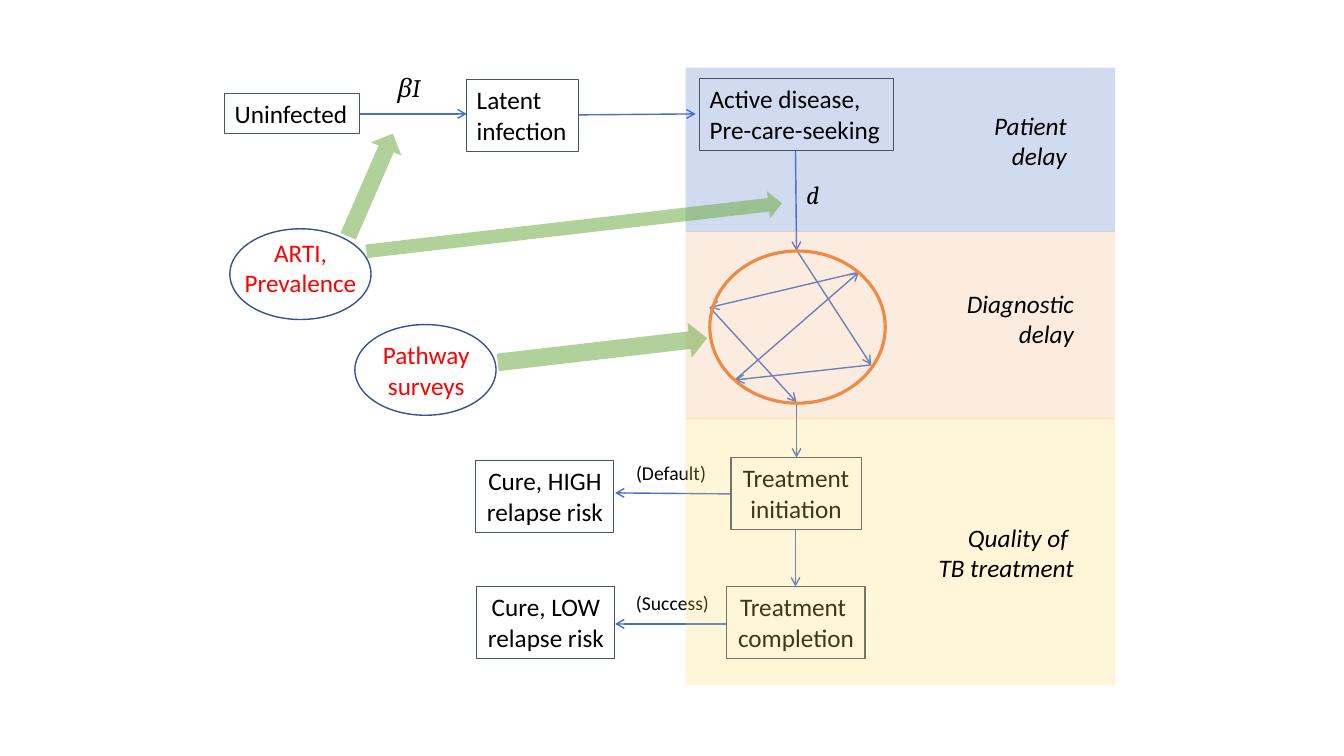
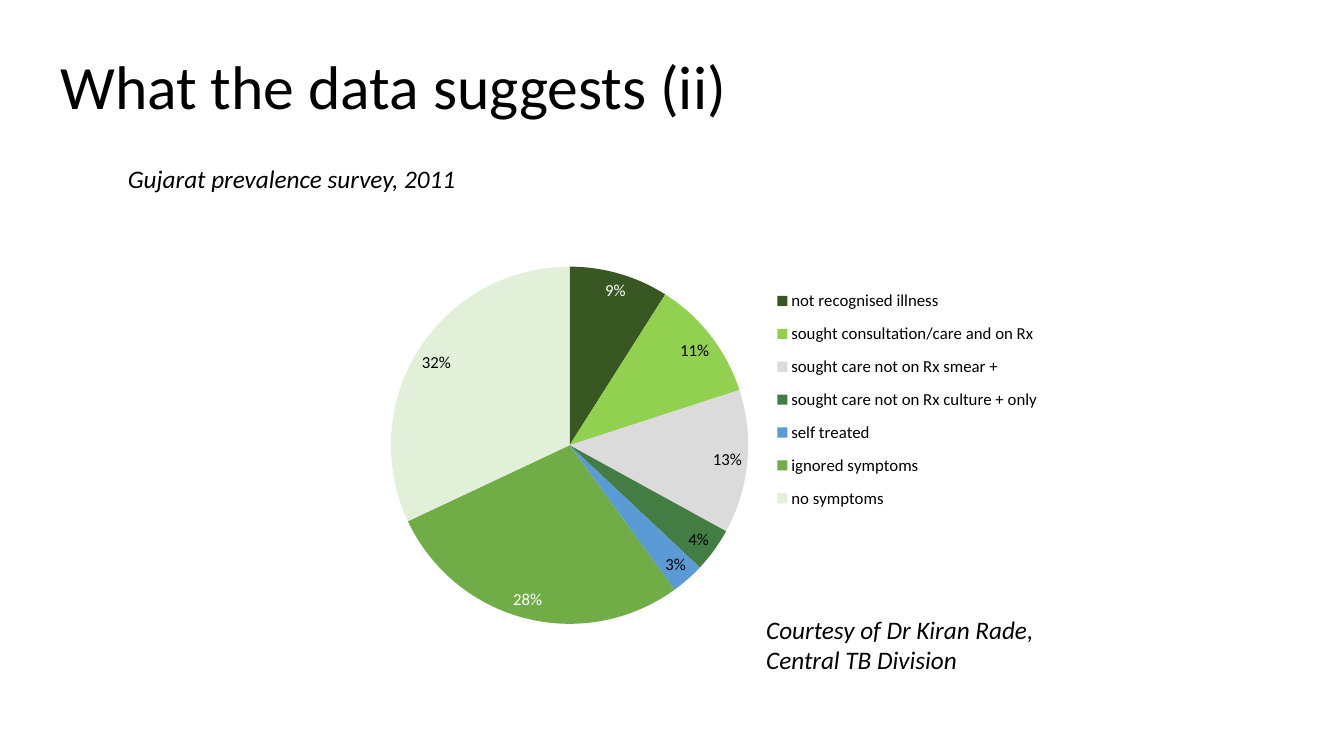
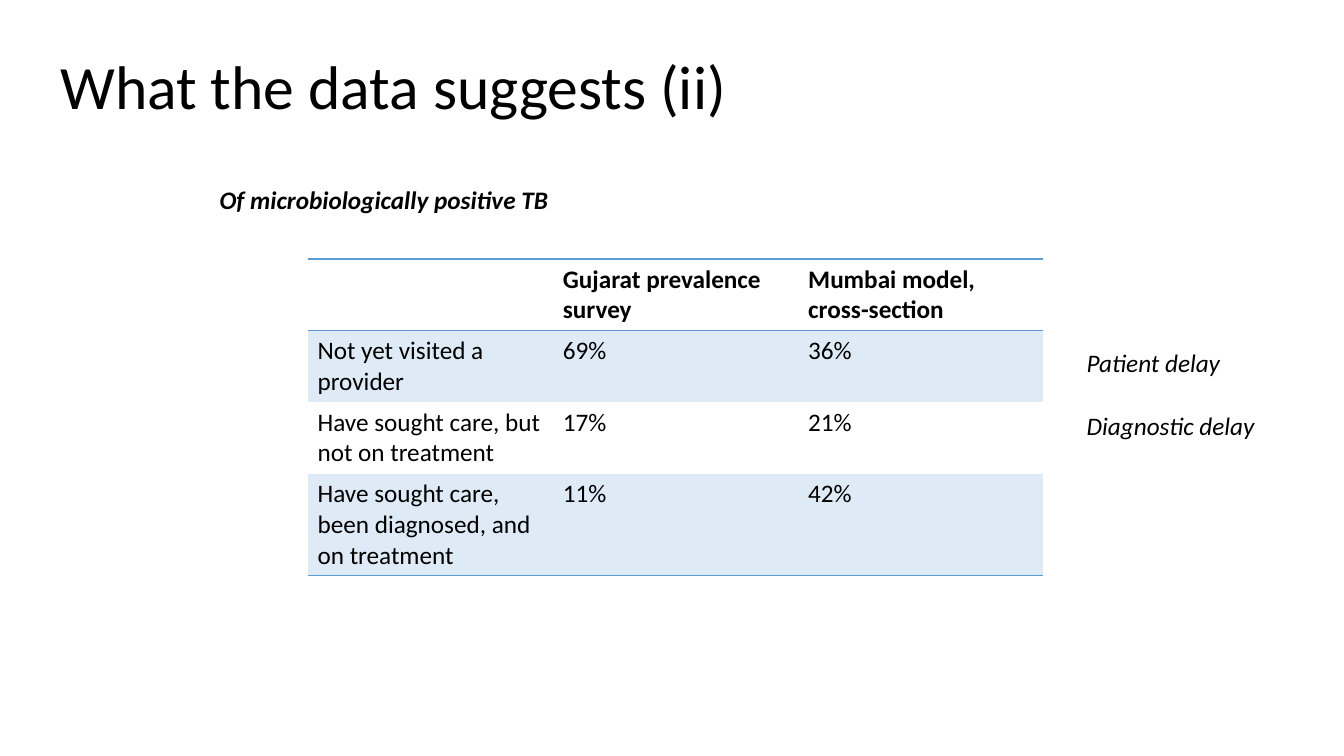
from lxml import etree
from pptx import Presentation
from pptx.chart.data import CategoryChartData
from pptx.dml.color import RGBColor
from pptx.enum.chart import XL_CHART_TYPE, XL_LABEL_POSITION, XL_LEGEND_POSITION
from pptx.enum.shapes import MSO_CONNECTOR, MSO_SHAPE
from pptx.enum.text import MSO_ANCHOR, MSO_AUTO_SIZE, PP_ALIGN
from pptx.oxml.ns import qn
from pptx.util import Pt

PX = 9144  # 100 px to the inch
RECT, OVAL, ARROW = MSO_SHAPE.RECTANGLE, MSO_SHAPE.OVAL, MSO_SHAPE.RIGHT_ARROW
STRAIGHT = MSO_CONNECTOR.STRAIGHT
LEFT, MID, RIGHT = PP_ALIGN.LEFT, PP_ALIGN.CENTER, PP_ALIGN.RIGHT
MIDDLE, GROW = MSO_ANCHOR.MIDDLE, MSO_AUTO_SIZE.SHAPE_TO_FIT_TEXT
PIE, FIT = XL_CHART_TYPE.PIE, XL_LABEL_POSITION.BEST_FIT
SIDE = XL_LEGEND_POSITION.RIGHT

FONT = "Calibri"
BLACK, WHITE, RED = "000000", "FFFFFF", "FF0000"
BLUE, SLATE, NAVY, ORANGE, GREEN = "4472C4", "44546A", "325491", "ED7D31", "70AD47"
RULE, STRIPE = "5B9BD5", "DEEBF7"
NO_GRID = "{2D5ABB26-0587-4C30-8999-92F81FD0307C}"


def paint(fill, color):
    fill.solid()
    fill.fore_color.rgb = RGBColor.from_string(color)


def write(frame, text, align=LEFT, color=BLACK, **style):
    """Fill a text frame, one paragraph a line, in one format."""
    frame.text = text
    style = {"name": FONT, "size": Pt(18), **style}
    for para in frame.paragraphs:
        para.alignment = align
        for run in para.runs:
            paint(run.font.fill, color)
            for key, value in style.items():
                setattr(run.font, key, value)


deck = Presentation()
deck.slide_width, deck.slide_height = 1333 * PX, 750 * PX
flow, survey, model = [deck.slides.add_slide(deck.slide_layouts[6]) for _ in range(3)]

# Titles
for slide in (survey, model):
    title = slide.shapes.add_textbox(50 * PX, 40 * PX, 1192 * PX, 98 * PX)
    frame = title.text_frame
    frame.word_wrap, frame.vertical_anchor = True, MIDDLE
    write(frame, "What the data suggests (ii)", size=Pt(44))
    frame.paragraphs[0].line_spacing = 0.9

# Layers, from back to front: tinted shapes, arrows, rings, labels
center = {"align": MID}
slant = {"italic": True}
delay = {"italic": True, "align": RIGHT}
math = {"italic": True, "name": "Cambria"}
small = {"size": Pt(14)}
source = {"color": RED, "align": MID}

stops = [(790, 248), (864, 362), (729, 377), (852, 270), (704, 305), (790, 399), (790, 454)]
steps = [
    ((357, 113), (463, 113)),
    ((574, 114), (690, 113)),
    ((789, 149), (790, 249)),
    *zip(stops, stops[1:]),
    ((789, 526), (789, 582)),
    ((725, 490), (610, 489)),
    ((721, 619), (610, 619)),
]

layers = [
    (
        flow,
        [(RECT, (680, 67, 426, 163), 0, BLUE, 25)],
        steps,
        [((704, 249, 174, 151), ORANGE, 2.25)],
        [
            ((223, 93, 134, 40), SLATE, "Uninfected", {}),
            ((463, 79, 111, 71), SLATE, "Latent\ninfection", {}),
            ((694, 78, 192, 71), SLATE, "Active disease,\nPre-care-seeking", {}),
            ((725, 454, 129, 71), SLATE, "Treatment \ninitiation", center),
            ((721, 582, 137, 71), SLATE, "Treatment \ncompletion", center),
            ((472, 457, 137, 71), SLATE, "Cure, HIGH\nrelapse risk", center),
            ((473, 582, 137, 71), SLATE, "Cure, LOW\nrelapse risk", center),
            ((384, 67, 49, 40), None, "βI", math),
            ((790, 173, 33, 40), None, "d", math),
            ((621, 452, 91, 34), None, "(Default)", small),
            ((621, 581, 93, 34), None, "(Success)", small),
        ],
    ),
    (
        flow,
        [
            (RECT, (680, 229, 426, 187), 0, "F4B183", 25),
            (RECT, (680, 414, 426, 266), 0, "FFD966", 25),
            (ARROW, (362, 212, 415, 27), 353.4, GREEN, 55),
            (ARROW, (312, 167, 111, 33), 293.5, GREEN, 55),
            (ARROW, (493, 330, 209, 35), 353.4, GREEN, 55),
        ],
        [],
        [((228, 227, 140, 90), NAVY, 1), ((352, 322, 140, 90), NAVY, 1)],
        [
            ((975, 104, 93, 71), None, "Patient\ndelay", delay),
            ((947, 281, 128, 71), None, "Diagnostic\ndelay", delay),
            ((919, 513, 156, 71), None, "Quality of \nTB treatment", delay),
            ((232, 230, 132, 71), None, "ARTI,\nPrevalence", source),
            ((370, 332, 113, 71), None, "Pathway\nsurveys", source),
        ],
    ),
    (
        survey, [], [], [],
        [
            ((117, 157, 350, 40), None, "Gujarat prevalence survey, 2011", slant),
            ((750, 604, 295, 71), None, "Courtesy of Dr Kiran Rade,\nCentral TB Division", slant),
        ],
    ),
    (
        model, [], [], [],
        [
            ((208, 178, 349, 40), None, "Of microbiologically positive TB", {**slant, "bold": True}),
            ((1068, 340, 153, 40), None, "Patient delay", slant),
            ((1068, 402, 189, 40), None, "Diagnostic delay", slant),
        ],
    ),
]

for slide, tints, arrows, rings, labels in layers:
    shapes = slide.shapes
    for kind, box, turn, color, alpha in tints:
        tint = shapes.add_shape(kind, *[n * PX for n in box])
        tint.shadow.inherit = False
        tint.rotation = turn
        tint.line.fill.background()
        paint(tint.fill, color)
        shade = tint.element.spPr.find(".//" + qn("a:srgbClr"))
        etree.SubElement(shade, qn("a:alpha"), val=str(alpha * 1000))

    for start, end in arrows:
        arrow = shapes.add_connector(STRAIGHT, *[n * PX for n in start + end])
        arrow.line.width = Pt(1)
        paint(arrow.line.fill, BLUE)
        props = arrow.element.spPr
        etree.SubElement(props.find(qn("a:ln")), qn("a:tailEnd"), type="arrow")
        etree.SubElement(props, qn("a:effectLst"))

    for box, color, width in rings:
        ring = shapes.add_shape(OVAL, *[n * PX for n in box])
        ring.shadow.inherit = False
        ring.fill.background()
        ring.line.width = Pt(width)
        paint(ring.line.fill, color)

    for box, edge, text, style in labels:
        label = shapes.add_textbox(*[n * PX for n in box])
        frame = label.text_frame
        frame.word_wrap, frame.auto_size = False, GROW
        write(frame, text, **style)
        if edge:
            label.line.width = Pt(0.75)
            paint(label.line.fill, edge)
        if text.startswith("Pathway"):
            frame.paragraphs[0].alignment = LEFT

# Pie chart: name, share, slice colour, label colour
slices = [
    ("not recognised illness", 0.09, "385723", WHITE),
    ("sought consultation/care and on Rx", 0.11, "92D050", BLACK),
    ("sought care not on Rx smear +", 0.13, "DBDBDB", BLACK),
    ("sought care not on Rx culture + only", 0.04, "437D43", BLACK),
    ("self treated", 0.03, "5B9BD5", BLACK),
    ("ignored symptoms", 0.28, GREEN, WHITE),
    ("no symptoms", 0.32, "E2F0D9", BLACK),
]
data = CategoryChartData(number_format="0%")
data.categories = [row[0] for row in slices]
data.add_series("Series 1", [row[1] for row in slices])
box = (359, 257, 698, 377)
chart = survey.shapes.add_chart(PIE, *[n * PX for n in box], data).chart
chart.has_title, chart.has_legend = False, True
chart.font.name, chart.font.size = FONT, Pt(10)
paint(chart.font.fill, BLACK)
legend = chart.legend
legend.position, legend.include_in_layout = SIDE, False
legend.font.size = Pt(12)

plot = chart.plots[0]
plot.vary_by_categories = plot.has_data_labels = True
marks = plot.series[0].data_labels
marks.show_value, marks.show_percentage = True, False
marks.number_format, marks.number_format_is_linked = "0%", False
marks.position, marks.font.size = FIT, Pt(12)
paint(marks.font.fill, BLACK)
for i, (_, _, color, ink) in enumerate(slices):
    point = plot.series[0].points[i]
    paint(point.format.fill, color)
    if ink != BLACK:
        mark = point.data_label
        mark.font.size, mark.position = Pt(12), FIT
        paint(mark.font.fill, ink)

area = chart.element.find(".//" + qn("c:plotArea"))
key = chart.element.find(".//" + qn("c:legend"))
for part, index, place in (
    (area, 0, {"layoutTarget": "inner", "x": 0.03, "y": 0.02, "w": 0.53, "h": 0.94}),
    (key, 1, {"x": 0.56, "y": 0.05, "w": 0.43, "h": 0.64}),
):
    for old in part.findall(qn("c:layout")):
        part.remove(old)
    layout = etree.Element(qn("c:layout"))
    manual = etree.SubElement(layout, qn("c:manualLayout"))
    modes = {"xMode": "edge", "yMode": "edge"}
    target = {k: v for k, v in place.items() if k == "layoutTarget"}
    for name, value in {**target, **modes, **place}.items():
        etree.SubElement(manual, qn("c:" + name), val=str(value))
    part.insert(index, layout)

# Table
rows = [
    ("", "Gujarat prevalence survey", "Mumbai model, cross-section"),
    ("Not yet visited a provider", "69%", "36%"),
    ("Have sought care, but not on treatment", "17%", "21%"),
    ("Have sought care, been diagnosed, and on treatment", "11%", "42%"),
]
heights = [71, 71, 71, 101]
borders = {0: ("a:lnT", "a:lnB"), 3: ("a:lnB",)}
box = (305, 257, 730, sum(heights))
table = model.shapes.add_table(4, 3, *[n * PX for n in box]).table
table.first_row = table.horz_banding = False
table._tbl.tblPr.find(qn("a:tableStyleId")).text = NO_GRID
for i, row in enumerate(rows):
    table.rows[i].height = heights[i] * PX
    for j, text in enumerate(row):
        cell = table.cell(i, j)
        write(cell.text_frame, text, bold=i == 0)
        if i % 2:
            paint(cell.fill, STRIPE)
        else:
            cell.fill.background()
        props = cell._tc.get_or_add_tcPr()
        for k, side in enumerate(borders.get(i, ())):
            line = etree.Element(qn(side), w=str(Pt(1)))
            solid = etree.SubElement(line, qn("a:solidFill"))
            etree.SubElement(solid, qn("a:srgbClr"), val=RULE)
            props.insert(k, line)

deck.save("out.pptx")
